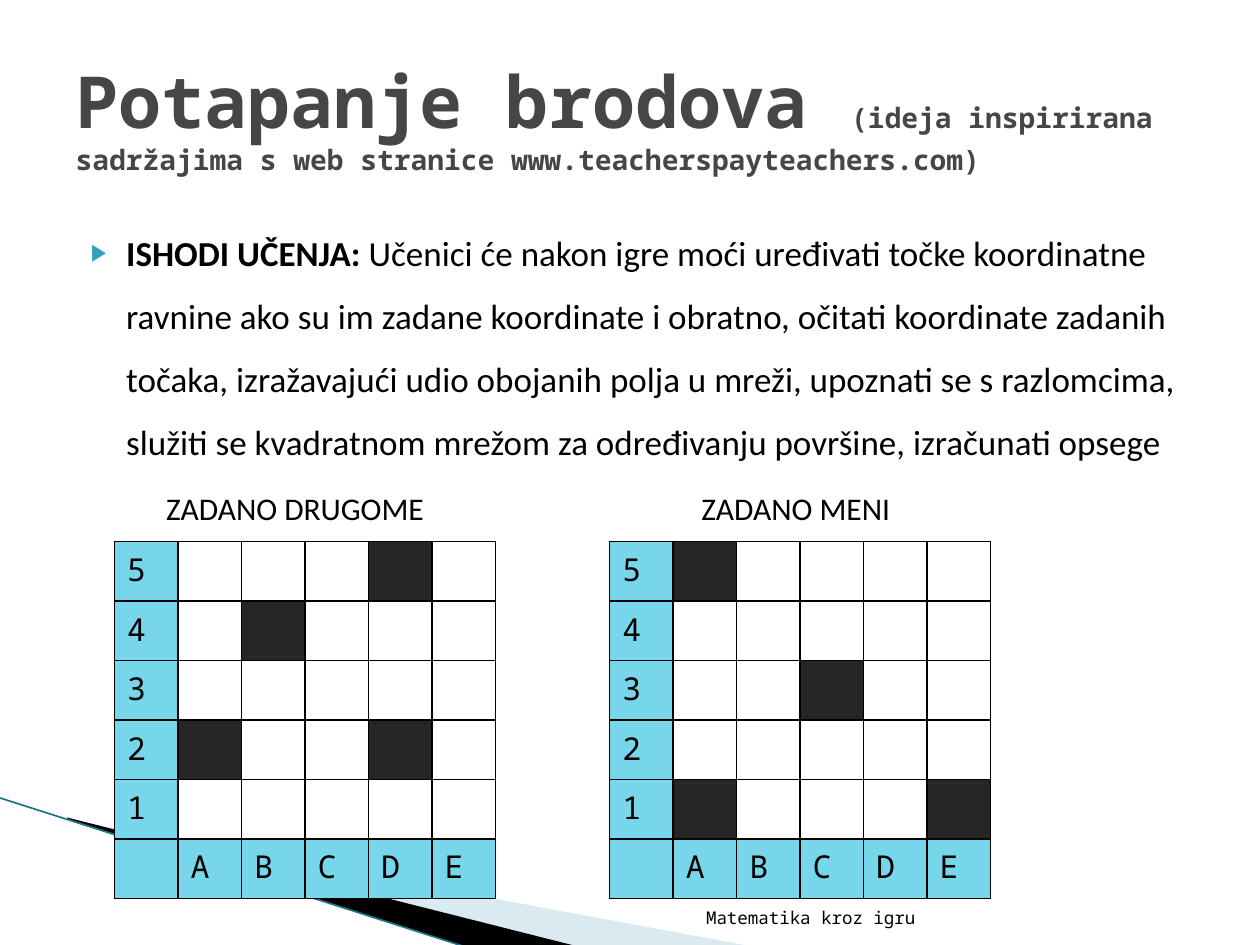
import pptx
import pptx.dml.color
import pptx.enum.text
import pptx.oxml
import pptx.oxml.ns
import pptx.util
from lxml import etree
from pptx.util import Cm, Pt

COLOURS = {
    "text": "000000", "title": "464646", "bullet": "2DA2BF",
    "header": "78D6EA", "ship": "262626", "water": "FFFFFF", "border": "000000",
    "pale_wave": "A0CBDC", "dark_wave": "000000", "wave_edge": "1F7389",
}
MONO, SANS = "Noto Sans Mono", "Calibri"
ROWS, COLUMNS = "54321", "ABCDE"
ANCHOR = pptx.enum.text.MSO_ANCHOR
ALIGN = pptx.enum.text.PP_ALIGN


def rgb(name):
    return pptx.dml.color.RGBColor.from_string(COLOURS[name])


def add_child(parent, tag, **attributes):
    return etree.SubElement(parent, pptx.oxml.ns.qn(tag), attributes)


def add_span(para, text, size, face, colour="text", bold=False):
    span = para.add_run()
    span.text = text
    span.font.size = Pt(size)
    span.font.name = face
    span.font.bold = bold
    span.font.color.rgb = rgb(colour)


def place(shape, left, top, width, height):
    shape.left, shape.top = Cm(left), Cm(top)
    shape.width, shape.height = Cm(width), Cm(height)


def add_wave(page, points, colour, opacity=None):
    start, *others = [(Cm(x), Cm(y)) for x, y in points]
    builder = page.shapes.build_freeform(*start)
    builder.add_line_segments(others)
    wave = builder.convert_to_shape()
    wave.shadow.inherit = False
    wave.fill.solid()
    wave.fill.fore_color.rgb = rgb(colour)
    wave.line.fill.background()
    if opacity:
        tint = wave.fill._xPr.find(".//" + pptx.oxml.ns.qn("a:srgbClr"))
        add_child(tint, "a:alpha", val=str(opacity * 1000))


def add_corner_waves(page):
    add_wave(page, [(1.4, 16.53), (15.11, 19.07), (11.58, 19.07), (1.4, 16.51)],
             "pale_wave", 40)
    add_wave(page, [(1.35, 16.48), (11.61, 19.07), (9.45, 19.1), (1.37, 16.51)],
             "dark_wave")
    edge = page.shapes.add_connector(pptx.enum.shapes.MSO_CONNECTOR.STRAIGHT,
                                     Cm(-0.02), Cm(16.08), Cm(9.42), Cm(19.1))
    edge.line.color.rgb = rgb("wave_edge")
    edge.line.width = Pt(0.95)
    add_child(edge._element.spPr, "a:effectLst")


def fill_title(page, left, top, width, height):
    title = page.shapes.title
    place(title, left, top, width, height)
    box = title.text_frame
    box.word_wrap = True
    box.auto_size = pptx.enum.text.MSO_AUTO_SIZE.NONE
    box.vertical_anchor = ANCHOR.MIDDLE
    para = box.paragraphs[0]
    para.alignment = ALIGN.LEFT
    add_span(para, "Potapanje brodova ", 41, MONO, "title", True)
    add_span(para, "(ideja inspirirana sadržajima s web stranice "
             "www.teacherspayteachers.com)", 16, MONO, "title", True)


def fill_outcomes(page, left, top, width, height):
    body = page.placeholders[1]
    place(body, left, top, width, height)
    box = body.text_frame
    box.word_wrap = True
    box.auto_size = pptx.enum.text.MSO_AUTO_SIZE.NONE
    para = box.paragraphs[0]
    para.line_spacing = 1.5
    para.space_before = Pt(0)
    properties = para._p.get_or_add_pPr()
    properties.set("marL", str(Cm(1.02)))
    properties.set("indent", str(Cm(-0.71)))
    add_child(add_child(properties, "a:buClr"), "a:srgbClr", val=COLOURS["bullet"])
    add_child(properties, "a:buSzPct", val="68000")
    add_child(properties, "a:buChar", char="▶")
    add_span(para, "ISHODI UČENJA: ", 20, SANS, bold=True)
    add_span(para, "Učenici će nakon igre moći uređivati točke koordinatne ravnine "
             "ako su im zadane koordinate i obratno, očitati koordinate zadanih "
             "točaka, izražavajući udio obojanih polja u mreži, upoznati se s "
             "razlomcima, služiti se kvadratnom mrežom za određivanju površine, "
             "izračunati opsege", 20, SANS)


def add_label(page, text, size, face, left, top, width, height):
    label = page.shapes.add_textbox(Cm(left), Cm(top), Cm(width), Cm(height))
    label.text_frame.word_wrap = True
    add_span(label.text_frame.paragraphs[0], text, size, face)
    return label.text_frame


def format_cell(cell, text, colour):
    properties = cell._tc.get_or_add_tcPr()
    for side in ("a:lnL", "a:lnR", "a:lnT", "a:lnB"):
        border = add_child(properties, side, w=str(Pt(1)))
        add_child(add_child(border, "a:solidFill"), "a:srgbClr", val=COLOURS["border"])
    cell.fill.solid()
    cell.fill.fore_color.rgb = rgb(colour)
    if text:
        add_span(cell.text_frame.paragraphs[0], text, 18, MONO)


def add_board(page, left, top, caption, caption_shift, caption_width, ships):
    """Caption above a lettered and numbered grid; ships are names such as D5."""
    add_label(page, caption, 18, SANS, left + caption_shift, top - 1.19,
              caption_width, 1.02)
    count = len(ROWS) + 1
    grid = page.shapes.add_table(count, count, Cm(left), Cm(top),
                                 Cm(1.28 * count), Cm(1.2 * count)).table
    grid.first_row = grid.horz_banding = False
    for y, number in enumerate([*ROWS, ""]):
        for x, letter in enumerate(["", *COLUMNS]):
            if letter and number:
                colour = "ship" if letter + number in ships else "water"
                format_cell(grid.cell(y, x), "", colour)
            else:
                format_cell(grid.cell(y, x), letter + number, "header")


def add_footer(page, left, top, width, height):
    box = add_label(page, "Matematika kroz igru", 10, MONO, left, top, width, height)
    box.vertical_anchor = ANCHOR.BOTTOM
    box.paragraphs[0].alignment = ALIGN.RIGHT


def main():
    deck = pptx.Presentation()
    deck.slide_width, deck.slide_height = Cm(25.4), Cm(19.05)
    page = deck.slides.add_slide(deck.slide_layouts[1])
    add_corner_waves(page)
    fill_title(page, 1.27, 0.76, 22.86, 3.18)
    fill_outcomes(page, 1.27, 4.11, 22.86, 12.57)
    add_footer(page, 12.17, 17.81, 6.53, 1.02)
    add_board(page, 2.31, 10.92, "ZADANO DRUGOME", 0.79, 6.2, {"D5", "B4", "A2", "D2"})
    add_board(page, 12.29, 10.92, "ZADANO MENI", 1.6, 5, {"A5", "C3", "A1", "E1"})
    deck.save("out.pptx")


if __name__ == "__main__":
    main()
